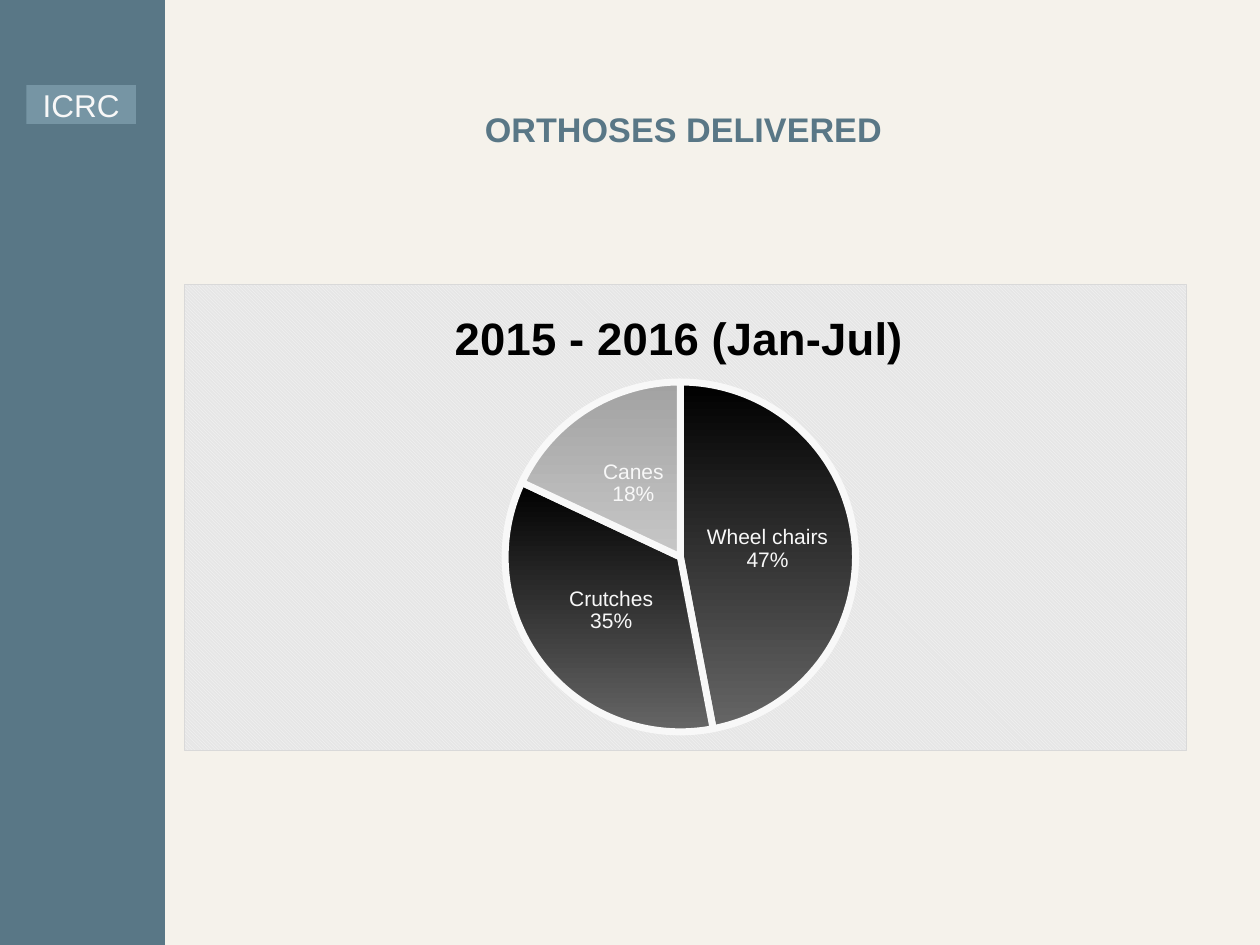
"""Build the slide on orthoses delivered, with a pie chart of the shares."""
import lxml.etree
import pptx
import pptx.chart.data
import pptx.dml.color
import pptx.enum.chart
import pptx.enum.shapes
import pptx.enum.text
import pptx.util

WIDTH, HEIGHT = pptx.util.Inches(10), pptx.util.Inches(7.5)
PAPER, SLATE, MIST, WHITE = "F5F2EB", "597786", "7695A4", "F8F8F8"


def colour(hex_value):
    return pptx.dml.color.RGBColor.from_string(hex_value)


def write(frame, wording, hex_value, **font_values):
    frame.text = wording
    frame_values = {"margin_left": 0, "margin_right": 0, "margin_top": 0, "margin_bottom": 0,
                    "word_wrap": True, "vertical_anchor": pptx.enum.text.MSO_ANCHOR.MIDDLE}
    for key, value in frame_values.items():
        setattr(frame, key, value)
    line = frame.paragraphs[0]
    line.alignment = pptx.enum.text.PP_ALIGN.CENTER
    font = line.runs[0].font
    for key, value in {"name": "Arial", **font_values}.items():
        setattr(font, key, value)
    font.color.rgb = colour(hex_value)


deck = pptx.Presentation()
deck.slide_width, deck.slide_height = WIDTH, HEIGHT
slide = deck.slides.add_slide(deck.slide_layouts[6])
slide.background.fill.solid()
slide.background.fill.fore_color.rgb = colour(PAPER)

panels = []
for left, top, width, height, fill in [(0, 0, 0.131, 1, SLATE), (0.021, 0.09, 0.087, 0.041, MIST)]:
    panel = slide.shapes.add_shape(
        pptx.enum.shapes.MSO_SHAPE.RECTANGLE,
        int(left * WIDTH), int(top * HEIGHT), int(width * WIDTH), int(height * HEIGHT))
    panel.shadow.inherit = False
    panel.fill.solid()
    panel.fill.fore_color.rgb = colour(fill)
    panel.line.fill.background()
    panels.append(panel)
sidebar, agency = panels
write(agency.text_frame, "ICRC", WHITE, size=pptx.util.Pt(18))

heading = slide.shapes.add_textbox(
    int(0.144 * WIDTH), int(0.112 * HEIGHT), int(0.797 * WIDTH), int(0.048 * HEIGHT))
write(heading.text_frame, "ORTHOSES DELIVERED", SLATE, size=pptx.util.Pt(19.5), bold=True)

deliveries = pptx.chart.data.CategoryChartData()
deliveries.categories = ["Wheel chairs", "Crutches", "Canes"]
deliveries.add_series("Series 1", [0.47, 0.35, 0.18])
deliveries = slide.shapes.add_chart(
    pptx.enum.chart.XL_CHART_TYPE.PIE, int(0.146 * WIDTH), int(0.3 * HEIGHT),
    int(0.796 * WIDTH), int(0.495 * HEIGHT), deliveries).chart
deliveries.has_legend = False
deliveries.font.name, deliveries.font.size = "Arial", pptx.util.Pt(10)
write(deliveries.chart_title.text_frame, "2015 - 2016 (Jan-Jul) ", "000000",
      size=pptx.util.Pt(26), bold=True)
deliveries.chart_title.include_in_layout = False

shares = deliveries.plots[0]
shares.vary_by_categories = True
shares.has_data_labels = True
labels = shares.data_labels
label_values = {"show_category_name": True, "show_percentage": True, "show_value": False,
                "number_format": "0%", "number_format_is_linked": False,
                "position": pptx.enum.chart.XL_LABEL_POSITION.CENTER}
for key, value in label_values.items():
    setattr(labels, key, value)
labels.font.name, labels.font.size = "Arial", pptx.util.Pt(12)
labels.font.color.rgb = colour(WHITE)

CHART_NS = "http://schemas.openxmlformats.org/drawingml/2006/chart"
DRAW_NS = "http://schemas.openxmlformats.org/drawingml/2006/main"
C = "{%s}" % CHART_NS
label_xml = shares._element.find(C + "dLbls")
separator = lxml.etree.Element(C + "separator")
separator.text = "\n"
label_xml.find(C + "showBubbleSize").addnext(separator) if label_xml.find(
    C + "showBubbleSize") is not None else label_xml.find(C + "showPercent").addnext(separator)

gradients = [("000000", "666666"), ("000000", "666666"), ("A2A2A2", "C7C7C7")]
for index, shades in enumerate(gradients):
    slice_format = shares.series[0].points[index].format
    slice_format.fill.gradient()
    slice_format.fill.gradient_angle = 270
    for stop, shade in zip(slice_format.fill.gradient_stops, shades):
        stop.color.rgb = colour(shade)
    slice_format.line.color.rgb = colour(WHITE)
    slice_format.line.width = pptx.util.Pt(4)

plot_area = deliveries._chartSpace.find(f"{C}chart/{C}plotArea")
for old_layout in plot_area.findall(C + "layout"):
    plot_area.remove(old_layout)
layout = lxml.etree.Element(C + "layout")
place = lxml.etree.SubElement(layout, C + "manualLayout")
for tag, value in {"layoutTarget": "inner", "xMode": "edge", "yMode": "edge",
                   "x": "0.32", "y": "0.21", "w": "0.35", "h": "0.75"}.items():
    lxml.etree.SubElement(place, C + tag, val=value)
plot_area.insert(0, layout)

backdrop = lxml.etree.fromstring(
    f'<c:spPr xmlns:c="{CHART_NS}" xmlns:a="{DRAW_NS}"><a:pattFill prst="dkDnDiag">'
    f'<a:fgClr><a:srgbClr val="{WHITE}"/></a:fgClr><a:bgClr><a:srgbClr val="E6E6E6"/></a:bgClr>'
    '</a:pattFill><a:ln w="9525"><a:solidFill><a:srgbClr val="D9D9D9"/></a:solidFill></a:ln>'
    '</c:spPr>')
deliveries._chartSpace.find(C + "chart").addnext(backdrop)

deck.save("out.pptx")
